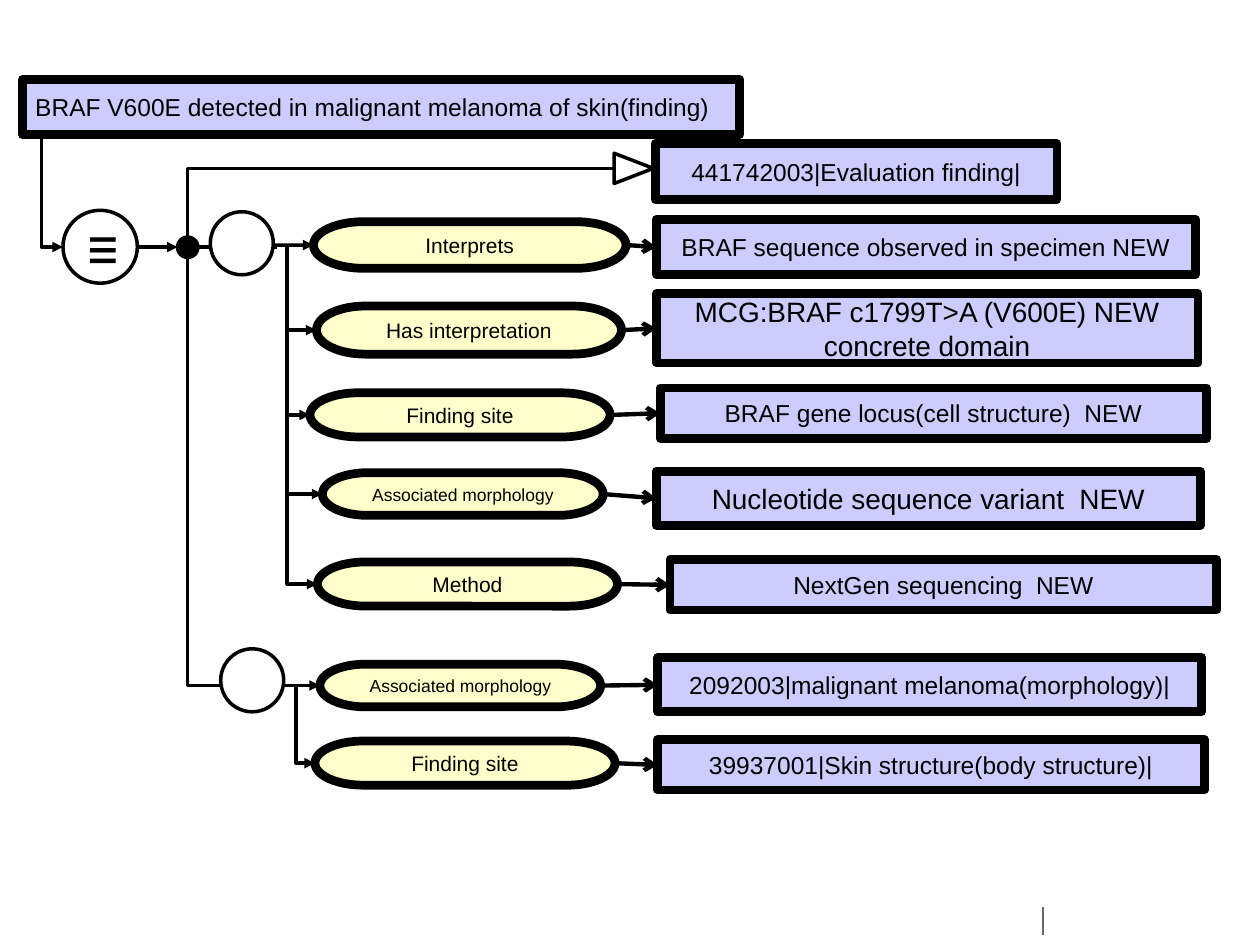
"""Build the concept diagram of a BRAF V600E melanoma finding."""
import pptx
import pptx.util
import pptx.dml.color
import pptx.enum.shapes
import pptx.enum.text
import pptx.oxml.ns
import lxml.etree

Cm = pptx.util.Cm
Pt = pptx.util.Pt
RGBColor = pptx.dml.color.RGBColor
KIND = pptx.enum.shapes.MSO_SHAPE
LINK = pptx.enum.shapes.MSO_CONNECTOR
ALIGN = pptx.enum.text.PP_ALIGN
qn = pptx.oxml.ns.qn

BLACK = RGBColor(0x00, 0x00, 0x00)
WHITE = RGBColor(0xFF, 0xFF, 0xFF)
GREY = RGBColor(0x66, 0x66, 0x66)
LILAC = RGBColor(0xCC, 0xCC, 0xFF)
CREAM = RGBColor(0xFF, 0xFF, 0xCC)

deck = pptx.Presentation()
deck.slide_width, deck.slide_height = Cm(25.4), Cm(19.05)
slide = deck.slides.add_slide(deck.slide_layouts[6])


def box(text, spot, kind=KIND.RECTANGLE, fill=LILAC, width=5, size=14,
        font="Arial", align=ALIGN.CENTER):
    shape = slide.shapes.add_shape(kind, *[Cm(n) for n in spot])
    shape.shadow.inherit = False
    if fill is None:
        shape.fill.background()
    else:
        shape.fill.solid()
        shape.fill.fore_color.rgb = fill
    shape.line.color.rgb = BLACK
    shape.line.width = Pt(width)
    if text:
        frame = shape.text_frame
        frame.word_wrap = True
        frame.vertical_anchor = pptx.enum.text.MSO_ANCHOR.MIDDLE
        para = frame.paragraphs[0]
        para.alignment = align
        run = para.add_run()
        run.text = text
        run.font.size = Pt(size)
        run.font.name = font
        run.font.color.rgb = BLACK
    return shape


def link(start, end, head=None, width=2, color=BLACK, bent=False):
    (left, top), (right, base) = start, end
    if bent:
        wide, high = abs(base - top), right - left
        mid_x, mid_y = (left + right) / 2, (top + base) / 2
        spot = (mid_x - wide / 2, mid_y - high / 2,
                mid_x + wide / 2, mid_y + high / 2)
    else:
        spot = left, top, right, base
    style = LINK.ELBOW if bent else LINK.STRAIGHT
    line = slide.shapes.add_connector(style, *[Cm(n) for n in spot])
    line.line.color.rgb = color
    line.line.width = Pt(width)
    props = line._element.spPr
    if bent:
        props.find(qn("a:prstGeom")).set("prst", "bentConnector2")
        frame = props.find(qn("a:xfrm"))
        frame.set("flipH", "1")
        frame.set("rot", "16200000" if base > top else "5400000")
        if base < top:
            frame.set("flipV", "1")
    if head:
        stroke = props.find(qn("a:ln"))
        lxml.etree.SubElement(stroke, qn("a:tailEnd")).set("type", head)
    lxml.etree.SubElement(props, qn("a:effectLst"))
    return line


link((21.03, 18.29), (21.03, 18.85), width=1, color=GREY)

# name, size, pill spot, value, size, value spot, trunk start
ROWS = [
    ("Interprets", 12, (6.32, 4.47, 6.3, 0.94),
     "BRAF sequence observed in specimen NEW", 14,
     (13.23, 4.42, 10.87, 1.12), None),
    ("Has interpretation", 12, (6.38, 6.17, 6.15, 0.97),
     "MCG:BRAF c1799T>A (V600E) NEW concrete domain", 16,
     (13.23, 5.92, 10.92, 1.4), (5.79, 4.98)),
    ("Finding site", 12, (6.25, 7.92, 6.05, 0.89),
     "BRAF gene locus(cell structure)  NEW", 14,
     (13.31, 7.82, 11.02, 1.02), (5.79, 4.98)),
    ("Associated morphology", 10, (6.5, 9.53, 5.66, 0.86),
     "Nucleotide sequence variant  NEW", 16,
     (13.23, 9.5, 10.97, 1.09), (5.79, 4.98)),
    ("Method", 12, (6.4, 11.33, 6.05, 0.89),
     "NextGen sequencing  NEW", 14,
     (13.51, 11.28, 11.02, 1.02), (5.79, 4.98)),
    ("Associated morphology", 10, (6.45, 13.39, 5.66, 0.86),
     "2092003|malignant melanoma(morphology)|", 14,
     (13.26, 13.26, 10.97, 1.09), (3.78, 5.16)),
    ("Finding site", 12, (6.35, 14.94, 6.05, 0.89),
     "39937001|Skin structure(body structure)|", 14,
     (13.26, 14.91, 11.02, 1.02), (5.97, 13.82)),
]
for name, small, place, value, size, spot, trunk in ROWS:
    pill = box(name, place, KIND.FLOWCHART_TERMINATOR, CREAM, size=small)
    goal = box(value, spot, size=size)
    left, top, wide, high = place
    port = left, top + high / 2
    if trunk:
        link(trunk, port, "triangle", bent=True)
    else:
        link((4.88, port[1]), port, "triangle").end_connect(pill, 1)
    arrow = link((left + wide, port[1]), spot[:2], "arrow", 2.5)
    arrow.begin_connect(pill, 3)
    arrow.end_connect(goal, 1)

link((0.84, 2.72), (1.27, 4.98), "triangle", bent=True)
box("≡", (1.27, 4.24, 1.5, 1.47), KIND.OVAL, WHITE, 2, 32, "Noto Sans Mono")
link((2.77, 4.98), (3.58, 4.98), "triangle")
box("", (3.58, 4.78, 0.41, 0.41), KIND.OVAL, BLACK, 2)
link((5.59, 4.98), (3.99, 4.98), width=2.25)
for left, top in ((4.24, 4.27), (4.45, 13.08)):
    box("", (left, top, 1.27, 1.27), KIND.FLOWCHART_CONNECTOR, WHITE, 2)

box("BRAF V600E detected in malignant melanoma of skin(finding)",
    (0.46, 1.6, 14.45, 1.12), align=ALIGN.LEFT)
tip = box("", (12.47, 3, 0.61, 0.79), KIND.ISOSCELES_TRIANGLE, None, 2)
tip.rotation = 90
link((3.78, 4.78), (12.37, 3.4), bent=True)
box("441742003|Evaluation finding|", (13.21, 2.9, 8.1, 1.12))

deck.save("out.pptx")
